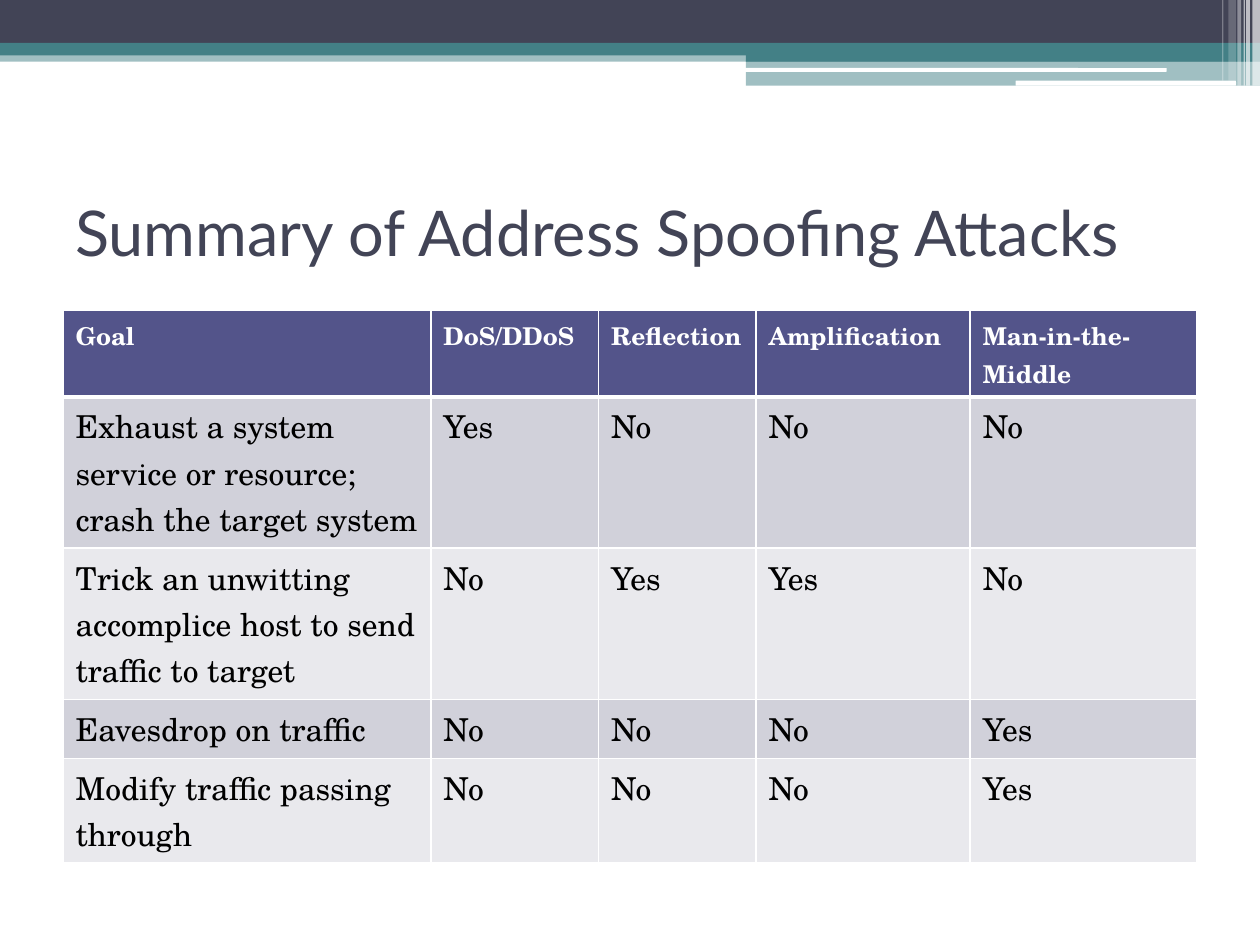
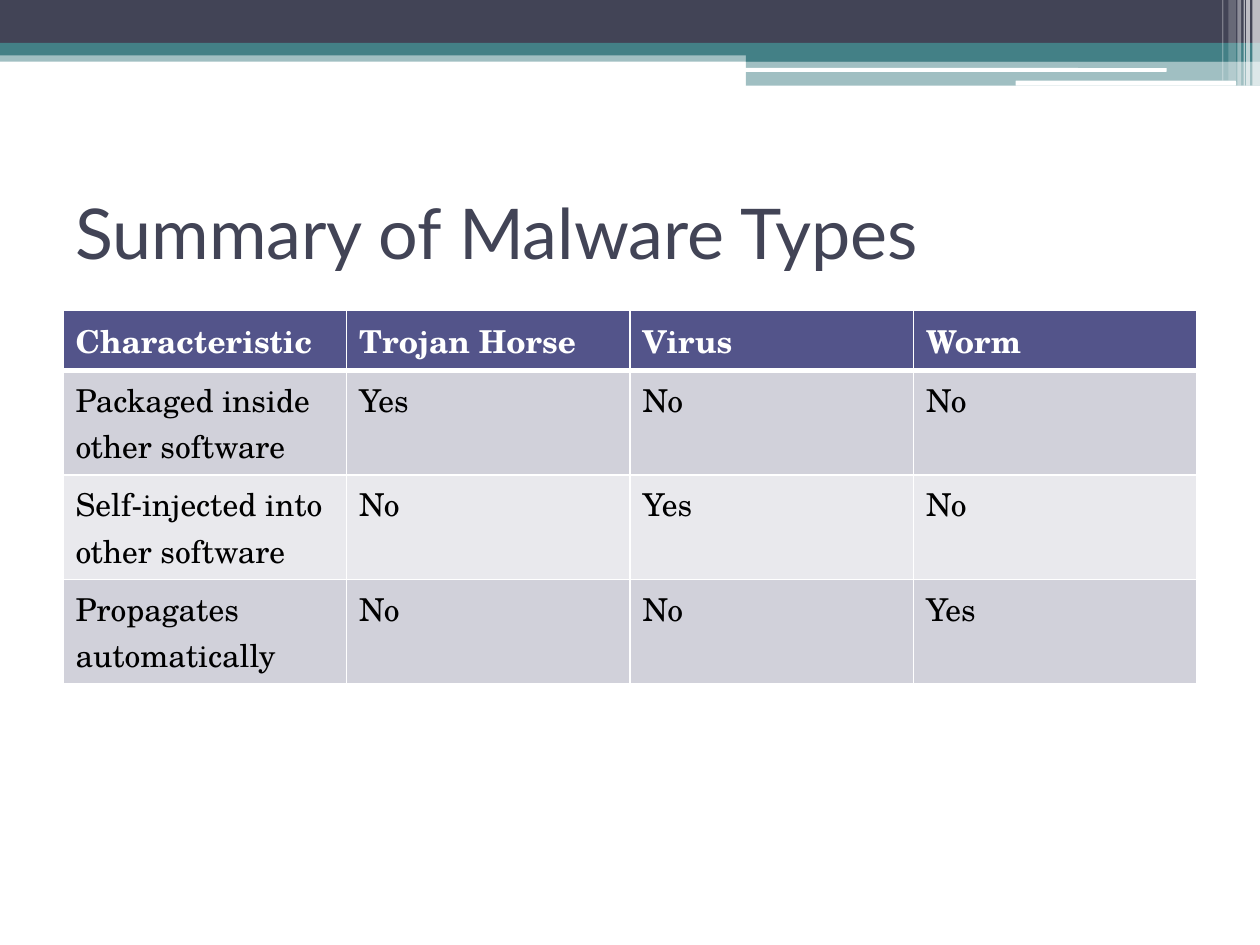
from dataclasses import dataclass

from lxml.etree import SubElement
from pptx import Presentation
from pptx.dml.color import RGBColor
from pptx.enum.shapes import MSO_SHAPE
from pptx.enum.text import MSO_ANCHOR
from pptx.oxml.ns import qn
from pptx.slide import Slide
from pptx.table import _Cell
from pptx.util import Inches, Pt

NAVY, TEAL, WHITE, BLACK = "424456", "438086", "FFFFFF", "000000"
HEADER, ROWS = "53548A", ("D1D1DA", "E9E9ED")
HEAD_FONT, BODY_FONT = "Lato", "TeX Gyre Schola"


@dataclass(frozen=True)
class Band:
    left: float
    top: float
    width: float
    height: float
    color: str
    alpha: int = 100
    rounded: bool = False


@dataclass(frozen=True)
class Page:
    title: str
    size: int
    head_size: int
    widths: tuple[float, ...]
    heights: tuple[float, ...]
    rows: tuple[tuple[str, ...], ...]


BANDS = (
    Band(0, 0.4, 10, 0.09, TEAL, 50),
    Band(0, 0, 10, 0.34, NAVY),
    Band(0, 0.34, 10, 0.1, TEAL),
    Band(5.92, 0.39, 4.08, 0.1, TEAL),
    Band(5.92, 0.48, 4.08, 0.2, TEAL, 50),
    Band(5.91, 0.54, 3.35, 0.03, WHITE, rounded=True),
    Band(8.06, 0.64, 1.75, 0.04, WHITE, rounded=True),
    Band(9.94, 0, 0.06, 0.68, WHITE, 65),
    Band(9.89, 0, 0.03, 0.68, WHITE, 65),
    Band(9.87, 0, 0.01, 0.68, WHITE, 60),
    Band(9.82, 0, 0.03, 0.68, WHITE, 40),
    Band(9.75, 0, 0.06, 0.64, WHITE, 20),
    Band(9.7, 0, 0.01, 0.64, WHITE, 30),
)

PAGES = (
    Page(
        "Summary of Address Spoofing Attacks", 36, 14,
        (2.92, 1.33, 1.25, 1.7, 1.8), (0.69, 1.2, 1.2, 0.47, 0.83),
        (
            ("Goal", "DoS/DDoS", "Reflection", "Amplification", "Man-in-the-Middle"),
            ("Exhaust a system service or resource; crash the target system",
             "Yes", "No", "No", "No"),
            ("Trick an unwitting accomplice host to send traffic to target",
             "No", "Yes", "Yes", "No"),
            ("Eavesdrop on traffic", "No", "No", "No", "Yes"),
            ("Modify traffic passing through", "No", "No", "No", "Yes"),
        ),
    ),
    Page(
        "Summary of Malware Types", 40, 18,
        (2.25,) * 4, (0.48,) + (0.83,) * 3,
        (
            ("Characteristic", "Trojan Horse", "Virus", "Worm"),
            ("Packaged inside other software", "Yes", "No", "No"),
            ("Self-injected into other software", "No", "Yes", "No"),
            ("Propagates automatically", "No", "No", "Yes"),
        ),
    ),
)


def rgb(code: str) -> RGBColor:
    return RGBColor.from_string(code)


def style(para, name: str, size: int, color: str, bold: bool = False) -> None:
    font = para.font
    font.name, font.size, font.bold = name, Pt(size), bold
    font.color.rgb = rgb(color)


def add_band(slide: Slide, band: Band) -> None:
    kind = MSO_SHAPE.ROUNDED_RECTANGLE if band.rounded else MSO_SHAPE.RECTANGLE
    box = (band.left, band.top, band.width, band.height)
    shape = slide.shapes.add_shape(kind, *map(Inches, box))
    shape.shadow.inherit = False
    shape.line.fill.background()
    shape.fill.solid()
    shape.fill.fore_color.rgb = rgb(band.color)
    if band.alpha < 100:
        color = shape.fill._xPr.find(qn("a:solidFill"))[0]
        SubElement(color, qn("a:alpha"), val=str(band.alpha * 1000))


def add_title(slide: Slide, page: Page) -> None:
    box = slide.shapes.add_textbox(*map(Inches, (0.5, 1.25, 9, 1.17)))
    frame = box.text_frame
    frame.word_wrap = True
    frame.vertical_anchor = MSO_ANCHOR.MIDDLE
    frame.text = page.title
    style(frame.paragraphs[0], HEAD_FONT, page.size, NAVY)


def add_edges(cell: _Cell, top: int, bottom: int) -> None:
    """Draw white cell borders, with the top and bottom widths in points."""
    props = cell._tc.get_or_add_tcPr()
    for side, width in zip("LRTB", (1, 1, top, bottom)):
        line = SubElement(props, qn(f"a:ln{side}"), w=str(Pt(width)))
        fill = SubElement(line, qn("a:solidFill"))
        SubElement(fill, qn("a:srgbClr"), val=WHITE)


def add_grid(slide: Slide, page: Page) -> None:
    frame = slide.shapes.add_table(
        len(page.heights), len(page.widths), Inches(0.5), Inches(2.46),
        Inches(sum(page.widths)), Inches(sum(page.heights)))
    table = frame.table
    for col, width in zip(table.columns, page.widths):
        col.width = Inches(width)
    for r, texts in enumerate(page.rows):
        table.rows[r].height = Inches(page.heights[r])
        head = r == 0
        for c, text in enumerate(texts):
            cell = table.cell(r, c)
            cell.text = text
            style(cell.text_frame.paragraphs[0], BODY_FONT,
                  page.head_size if head else 18, WHITE if head else BLACK, head)
            add_edges(cell, 3 if r == 1 else 1, 3 if head else 1)
            cell.fill.solid()
            cell.fill.fore_color.rgb = rgb(HEADER if head else ROWS[(r - 1) % 2])


def main() -> None:
    deck = Presentation()
    deck.slide_width, deck.slide_height = Inches(10), Inches(7.5)
    for page in PAGES:
        slide = deck.slides.add_slide(deck.slide_layouts[6])
        for band in BANDS:
            add_band(slide, band)
        add_title(slide, page)
        add_grid(slide, page)
    deck.save("out.pptx")


if __name__ == "__main__":
    main()
